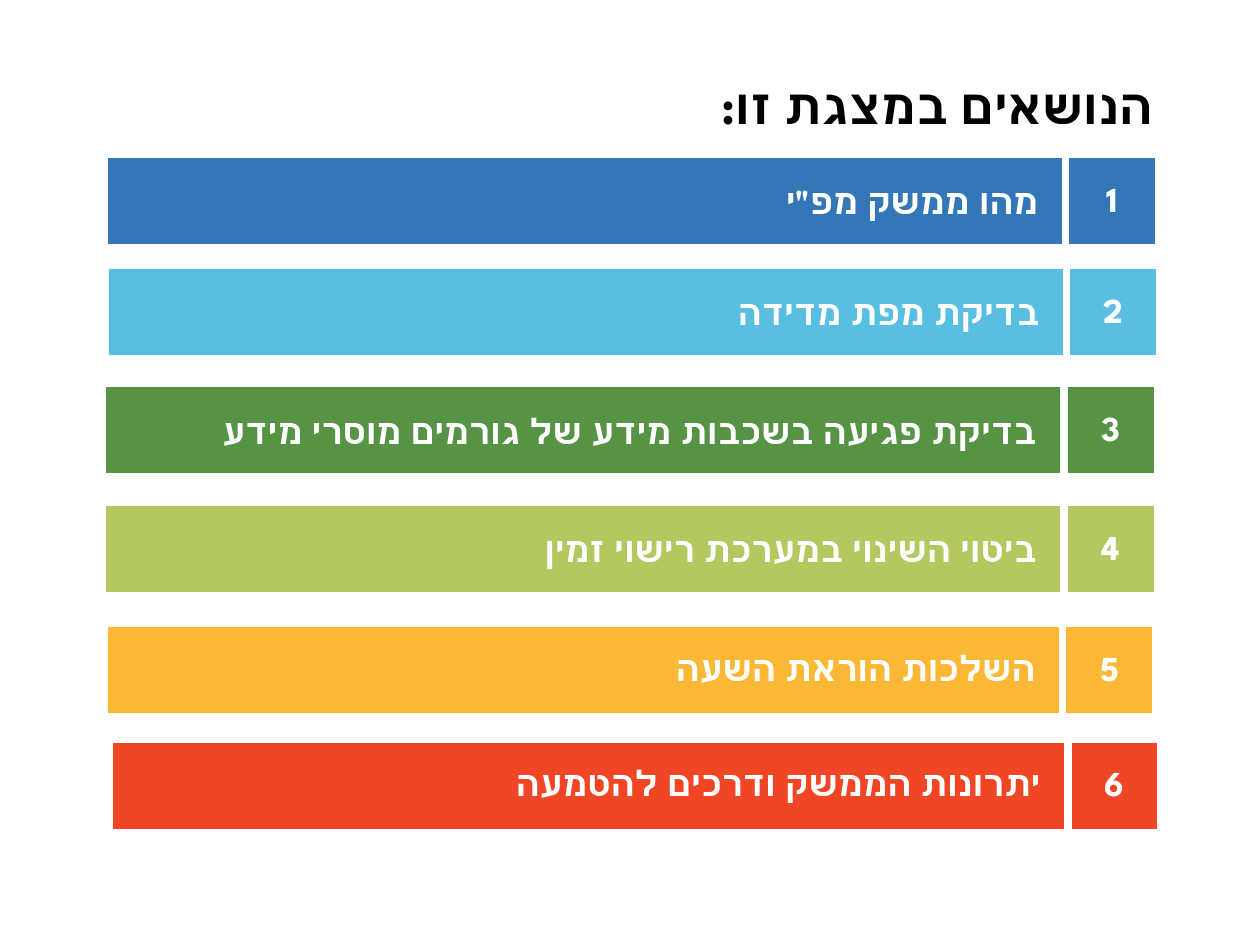
from pptx import Presentation
from pptx.dml.color import RGBColor
from pptx.enum.shapes import MSO_SHAPE
from pptx.enum.text import MSO_ANCHOR, PP_ALIGN
from pptx.oxml.xmlchemy import OxmlElement
from pptx.util import Inches, Pt

RECTANGLE = MSO_SHAPE.RECTANGLE
MIDDLE = MSO_ANCHOR.MIDDLE
CENTER, RIGHT = PP_ALIGN.CENTER, PP_ALIGN.RIGHT

COLORS = {
    "white": "FFFFFF", "black": "000000", "blue": "3377B9", "sky": "59BFE2",
    "green": "569345", "lime": "B3C85F", "amber": "FBB834", "red": "F04625",
}
HEADING_FONT, BODY_FONT = "League Spartan", "Calibri"

CELL = Inches(0.1)
TILE = 7.1
GAP = 0.3
INSET = 0.8
BAR_INSET = 2
TIGHT = 0.9

TOPICS = [
    ("מהו ממשק מפ\"י", "blue", HEADING_FONT, 8.4, 12.4, 76, None),
    ("בדיקת מפת מדידה", "sky", HEADING_FONT, 8.5, 21.2, 76, None),
    ("בדיקת פגיעה בשכבות מידע של גורמים מוסרי מידע", "green", BODY_FONT, 8.3, 30.6, 76, None),
    ("ביטוי השינוי במערכת רישוי זמין", "lime", HEADING_FONT, 8.3, 40, 76, None),
    ("השלכות הוראת השעה", "amber", HEADING_FONT, 8.4, 49.6, 75.8, TIGHT),
    ("יתרונות הממשק ודרכים להטמעה", "red", HEADING_FONT, 8.8, 58.8, 75.8, TIGHT),
]


def cells(count):
    return round(count * CELL)


def rgb(name):
    return RGBColor.from_string(COLORS[name])


def write_rtl(frame, text, size, font, color, align, spacing=None):
    paragraph = frame.paragraphs[0]
    paragraph.alignment = align
    paragraph.line_spacing = spacing
    paragraph._p.get_or_add_pPr().set("rtl", "1")
    run = paragraph.add_run()
    run.text = text
    run.font.size = Pt(size)
    run.font.bold = True
    run.font.name = font
    run.font.color.rgb = rgb(color)
    complex_font = OxmlElement("a:cs")
    complex_font.set("typeface", HEADING_FONT)
    run.font._rPr.append(complex_font)


def add_heading(slide, left, top, width, height):
    heading = slide.shapes.add_textbox(*map(cells, (left, top, width, height)))
    heading.text_frame.word_wrap = True
    write_rtl(heading.text_frame, "הנושאים במצגת זו:", 28, HEADING_FONT, "black", RIGHT)


def add_block(slide, left, top, width, color, right_inset):
    block = slide.shapes.add_shape(RECTANGLE, *map(cells, (left, top, width, TILE)))
    block.shadow.inherit = False
    block.fill.solid()
    block.fill.fore_color.rgb = rgb(color)
    block.line.color.rgb = rgb("white")
    block.line.width = Pt(2)
    frame = block.text_frame
    frame.word_wrap = True
    frame.vertical_anchor = MIDDLE
    frame.margin_left = frame.margin_top = frame.margin_bottom = cells(INSET)
    frame.margin_right = cells(right_inset)
    return frame


def add_topic(slide, number, title, color, font, left, top, width, spacing):
    bar = add_block(slide, left, top, width, color, BAR_INSET)
    write_rtl(bar, title, 20, font, "white", RIGHT, spacing)
    tile = add_block(slide, left + width + GAP, top, TILE, color, INSET)
    write_rtl(tile, str(number), 20, BODY_FONT, "white", CENTER, TIGHT)


def main():
    presentation = Presentation()
    presentation.slide_width = cells(100)
    presentation.slide_height = cells(75)
    slide = presentation.slides.add_slide(presentation.slide_layouts[6])
    add_heading(slide, 3.3, 5.5, 89.2, 4.5)
    for number, topic in enumerate(TOPICS, 1):
        add_topic(slide, number, *topic)
    presentation.save("out.pptx")


if __name__ == "__main__":
    main()
